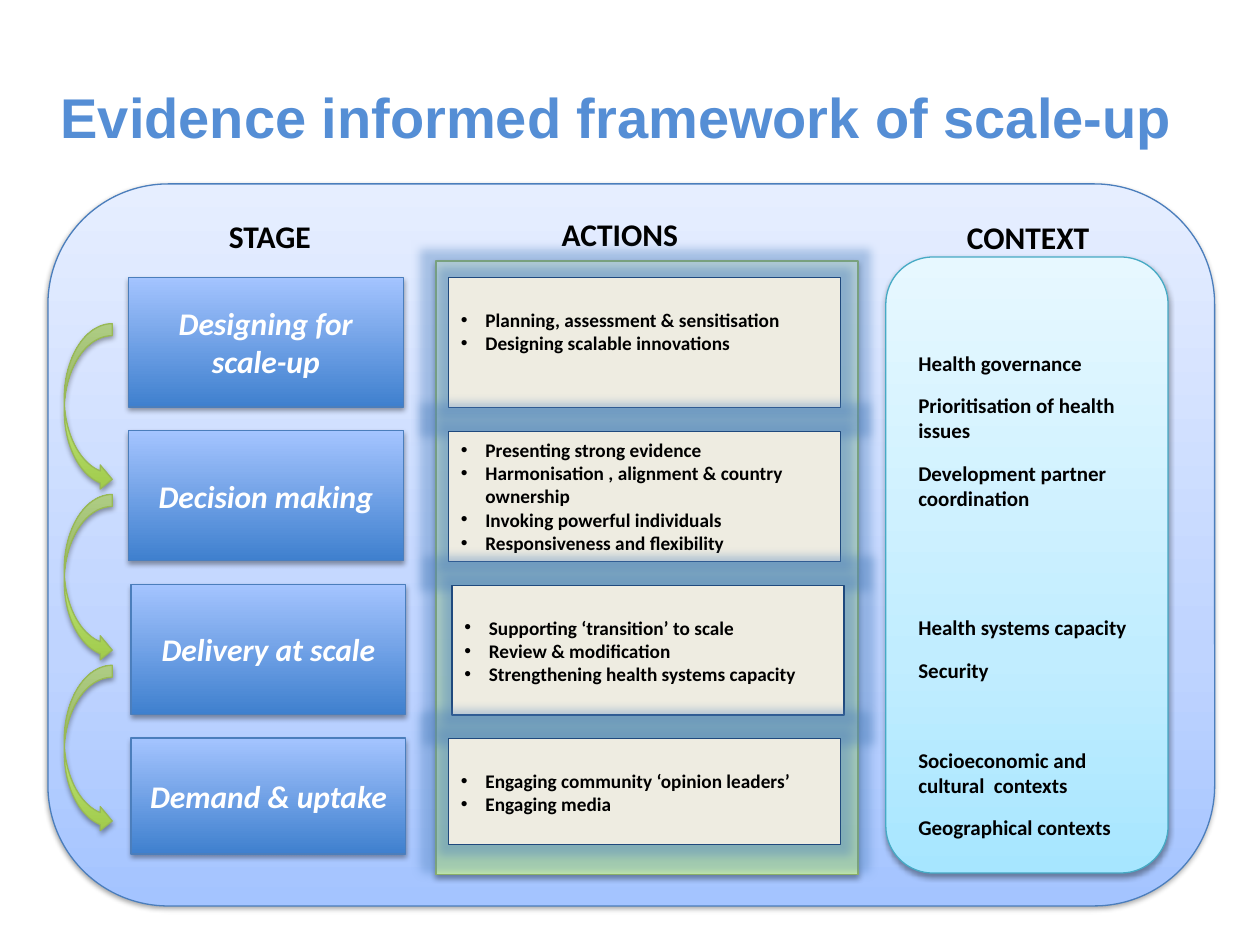
from lxml import etree
from pptx import Presentation
from pptx.dml.color import RGBColor
from pptx.enum.shapes import MSO_SHAPE
from pptx.enum.text import MSO_ANCHOR, PP_ALIGN
from pptx.oxml.ns import qn
from pptx.util import Pt

RECT = MSO_SHAPE.RECTANGLE
ROUND = MSO_SHAPE.ROUNDED_RECTANGLE
CURVED_ARROW = MSO_SHAPE.CURVED_RIGHT_ARROW
TOP, MIDDLE = MSO_ANCHOR.TOP, MSO_ANCHOR.MIDDLE
LEFT, CENTER = PP_ALIGN.LEFT, PP_ALIGN.CENTER

BLACK = RGBColor(0x00, 0x00, 0x00)
WHITE = RGBColor(0xFF, 0xFF, 0xFF)
TITLE_BLUE = RGBColor(0x55, 0x8E, 0xD5)
BLUE_LINE = RGBColor(0x4B, 0x7E, 0xBC)
GREEN_LINE = RGBColor(0x98, 0xB9, 0x55)
AQUA_LINE = RGBColor(0x46, 0xAA, 0xC5)
NAVY_LINE = RGBColor(0x1F, 0x49, 0x7D)
GLOW_BLUE = RGBColor(0x4F, 0x81, 0xBD)
CREAM = RGBColor(0xEE, 0xEC, 0xE1)
PALE_BLUE = [(0, RGBColor(0xA4, 0xC4, 0xFF)), (35, RGBColor(0xBF, 0xD4, 0xFF)),
             (100, RGBColor(0xE6, 0xEE, 0xFF))]
PALE_GREEN = [(0, RGBColor(0xDA, 0xFD, 0xA7)), (35, RGBColor(0xE4, 0xFC, 0xC2)),
              (100, RGBColor(0xF5, 0xFF, 0xE7))]
PALE_AQUA = [(0, RGBColor(0xA7, 0xE6, 0xFF)), (35, RGBColor(0xC1, 0xED, 0xFF)),
             (100, RGBColor(0xE7, 0xF8, 0xFF))]
STRONG_BLUE = [(0, RGBColor(0x3F, 0x80, 0xCE)), (100, RGBColor(0xA4, 0xC4, 0xFF))]
STRONG_GREEN = [(0, RGBColor(0xA0, 0xCA, 0x4A)), (100, RGBColor(0xDA, 0xFF, 0xA5))]

ROW_PITCH = 87.8
STAGES = [("Designing for\nscale-up", 0, 74.2), ("Decision making", 0, 74.2),
          ("Delivery at scale", 1.5, 74.2), ("Demand & uptake", 1.5, 66.2)]
ACTIONS = [
    (["Planning, assessment & sensitisation", "Designing scalable innovations"], 0, 74.2, 17.5),
    (["Presenting strong evidence", "Harmonisation , alignment & country ownership",
      "Invoking powerful individuals", "Responsiveness and flexibility"], 0, 74.2, 4),
    (["Supporting ‘transition’ to scale", "Review & modification",
      "Strengthening health systems capacity"], 2, 74.2, 17.5),
    (["Engaging community ‘opinion leaders’", "Engaging media"], 0, 60.5, 17.5),
]
CONTEXTS = [
    (["Health governance", "Prioritisation of health issues",
      "Development partner coordination"], 49.7, 99.4),
    (["Health systems capacity", "Security"], 200.9, 46),
    (["Socioeconomic and cultural  contexts", "Geographical contexts"], 276.5, 60.5),
]


def add_effect(s, tag, color, alpha, **attrs):
    s.shadow.inherit = False
    effects = s._element.spPr.find(qn("a:effectLst"))
    effect = etree.SubElement(effects, qn(tag), {k: str(v) for k, v in attrs.items()})
    clr = etree.SubElement(effect, qn("a:srgbClr"), val=str(color))
    etree.SubElement(clr, qn("a:alpha"), val=str(alpha * 1000))


def set_gradient(s, stops):
    s.fill.gradient()
    s.fill.gradient_angle = 90
    stop_list = s._element.spPr.find(qn("a:gradFill")).find(qn("a:gsLst"))
    for old in list(stop_list):
        stop_list.remove(old)
    for percent, color in stops:
        stop = etree.SubElement(stop_list, qn("a:gs"), pos=str(percent * 1000))
        etree.SubElement(stop, qn("a:srgbClr"), val=str(color))


def add_box(slide, kind, box, line):
    s = slide.shapes.add_shape(kind, *map(Pt, box))
    s.line.color.rgb = line
    s.line.width = Pt(0.75)
    return s


def add_shaded(slide, kind, box, stops, line):
    s = add_box(slide, kind, box, line)
    set_gradient(s, stops)
    add_effect(s, "a:outerShdw", BLACK, 36, blurRad=Pt(3.1), dist=Pt(1.7),
               dir=5400000, rotWithShape=0)
    return s


def add_text_box(slide, box):
    tf = slide.shapes.add_textbox(*map(Pt, box)).text_frame
    tf.word_wrap = True
    return tf


def format_text(tf, size, color=BLACK, align=LEFT, name="Calibri", italic=None):
    for p in tf.paragraphs:
        p.alignment = align
        for r in p.runs:
            r.font.name = name
            r.font.size = Pt(size)
            r.font.bold = True
            r.font.italic = italic
            r.font.color.rgb = color


def add_bullet(p, indent):
    pPr = p._p.get_or_add_pPr()
    pPr.set("marL", str(Pt(indent)))
    pPr.set("indent", str(-Pt(indent)))
    etree.SubElement(pPr, qn("a:buFont"), typeface="Arial")
    etree.SubElement(pPr, qn("a:buChar"), char="•")


def set_title(slide, box):
    title = slide.shapes.title
    title.left, title.top, title.width, title.height = map(Pt, box)
    tf = title.text_frame
    tf.text = "Evidence informed framework of scale-up"
    tf.vertical_anchor = MIDDLE
    format_text(tf, 32, TITLE_BLUE, name="Arial")


def add_heading(slide, text, x, y):
    tf = add_text_box(slide, (x, y, 129.6, 28.8))
    tf.text = text
    format_text(tf, 18, align=CENTER)


def add_stages(slide, x, y, w):
    add_heading(slide, "STAGE", x + 16, y - 38)
    for i, (label, shift, h) in enumerate(STAGES):
        s = add_shaded(slide, RECT, (x + shift, y + i * ROW_PITCH, w, h), STRONG_BLUE, BLUE_LINE)
        tf = s.text_frame
        tf.text = label
        tf.vertical_anchor = MIDDLE
        format_text(tf, 18, WHITE, CENTER, italic=True)
    for i in range(len(STAGES) - 1):
        add_shaded(slide, CURVED_ARROW, (x - 36.7, y + 26.6 + i * 97.6, 27.4, 95.8),
                   STRONG_GREEN, GREEN_LINE)


def add_actions(slide, x, y, w, h):
    add_shaded(slide, RECT, (x, y, w, h), PALE_GREEN, GREEN_LINE)
    add_heading(slide, "ACTIONS", x + 40.3, y - 29.5)
    for i, (lines, shift, height, inset) in enumerate(ACTIONS):
        box = (x + 7.2 + shift, y + 9.7 + i * ROW_PITCH, w - 17.2, height)
        s = add_box(slide, RECT, box, NAVY_LINE)
        s.fill.solid()
        s.fill.fore_color.rgb = CREAM
        add_effect(s, "a:glow", GLOW_BLUE, 40, rad=Pt(11))
        tf = s.text_frame
        tf.text = "\n".join(lines)
        tf.vertical_anchor = TOP
        tf.margin_top = Pt(inset)
        for p in tf.paragraphs:
            add_bullet(p, 14)
        format_text(tf, 11)


def add_context(slide, x, y, w, h):
    add_shaded(slide, ROUND, (x, y, w, h), PALE_AQUA, AQUA_LINE)
    add_heading(slide, "CONTEXT", x + 16.5, y - 26)
    for lines, offset, height in CONTEXTS:
        tf = add_text_box(slide, (x + 11.5, y + offset, w - 21.6, height))
        tf.text = "\n".join(lines)
        format_text(tf, 12)
        for p in tf.paragraphs[1:]:
            p.space_before = Pt(9.8)


def add_framework(slide, x, y, w, h):
    add_shaded(slide, ROUND, (x, y, w, h), PALE_BLUE, BLUE_LINE)
    add_stages(slide, x + 46, y + 53.3, 157)
    add_actions(slide, x + 221.7, y + 44, 241.2, 350.6)
    add_context(slide, x + 478.8, y + 41.8, 161.3, 352)


def main():
    prs = Presentation()
    prs.slide_width, prs.slide_height = Pt(720), Pt(540)
    slide = prs.slides.add_slide(prs.slide_layouts[5])
    set_title(slide, (27.4, 21.6, 666.7, 90))
    add_framework(slide, 27.4, 105.1, 666.7, 412.6)
    prs.save("out.pptx")


if __name__ == "__main__":
    main()
